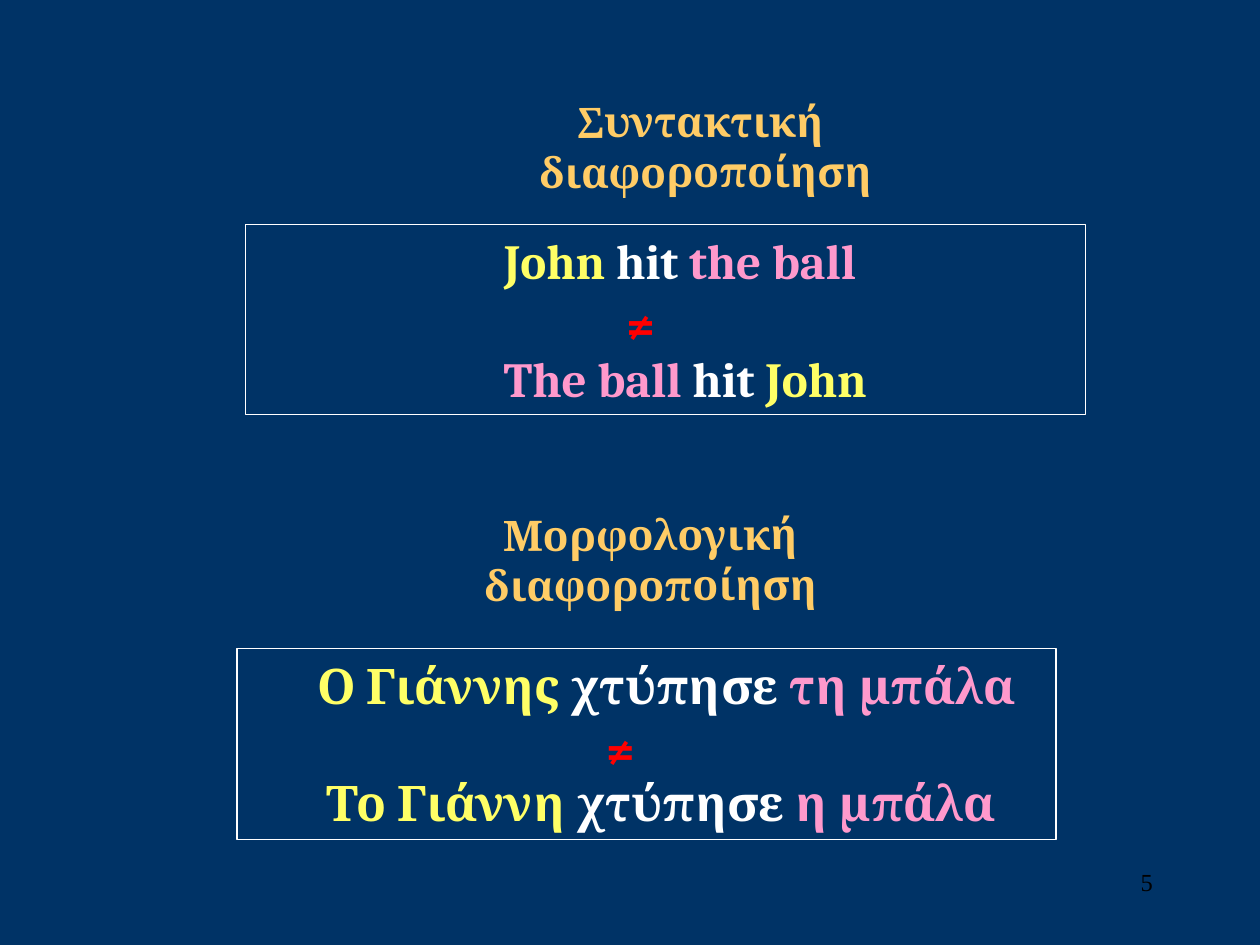
"""Build a slide contrasting syntactic and morphological differentiation."""
from pptx import Presentation
from pptx.dml.color import RGBColor
from pptx.enum.shapes import MSO_SHAPE
from pptx.enum.text import MSO_ANCHOR, PP_ALIGN
from pptx.util import Cm, Pt

NAVY = RGBColor(0x00, 0x33, 0x66)
GOLD = RGBColor(0xFF, 0xCC, 0x66)
YELLOW = RGBColor(0xFF, 0xFF, 0x66)
PINK = RGBColor(0xFF, 0x99, 0xCC)
WHITE = RGBColor(0xFF, 0xFF, 0xFF)
RED = RGBColor(0xFF, 0x00, 0x00)
BLACK = RGBColor(0x00, 0x00, 0x00)

PAIRS = [
    {
        "head": ["Συντακτική ", "διαφοροποίηση"],
        "head_at": (8.76, 1.8, 10.13, 2.31),
        "lines": [
            [("John", YELLOW), (" hit ", WHITE), ("the ball ", PINK)],
            [("The ball", PINK), (" hit ", WHITE), ("John", YELLOW)],
        ],
        "box_at": (4.95, 4.52, 16.94, 3.84),
        "sign_at": (12.37, 5.79, 1.04, 1.45),
    },
    {
        "head": ["Μορφολογική", "διαφοροποίηση"],
        "head_at": (8.59, 10.13, 8.26, 2.31),
        "lines": [
            [("Ο Γιάννης ", YELLOW), ("χτύπησε ", WHITE), ("τη μπάλα", PINK)],
            [("Το Γιάννη ", YELLOW), ("χτύπησε ", WHITE), ("η μπάλα ", PINK)],
        ],
        "box_at": (4.78, 13.08, 16.51, 3.84),
        "sign_at": (11.96, 14.35, 1.04, 1.45),
    },
]


def write(shape, lines, size=28, font="Cambria", bold=True, align=PP_ALIGN.CENTER,
          indent=0.79, gap=0, wrap=True):
    """Fill a shape with lines, each a list of (text, colour) runs."""
    frame = shape.text_frame
    frame.word_wrap = wrap
    frame.vertical_anchor = MSO_ANCHOR.TOP
    for i, runs in enumerate(lines):
        para = frame.add_paragraph() if i else frame.paragraphs[0]
        para.alignment = align
        para.space_before = Pt(gap if i else 0)
        if indent:
            para._p.get_or_add_pPr().set("marL", str(Cm(indent)))
        for text, color in runs:
            run = para.add_run()
            run.text = text
            run.font.size = Pt(size)
            run.font.name = font
            run.font.bold = bold
            run.font.color.rgb = color


def place(at):
    return [Cm(n) for n in at]


def draw(slide, pair):
    group = slide.shapes.add_group_shape().shapes
    box = group.add_shape(MSO_SHAPE.RECTANGLE, *place(pair["box_at"]))
    box.shadow.inherit = False
    box.fill.background()
    box.line.color.rgb = WHITE
    box.line.width = Pt(0.75)
    write(box, pair["lines"], gap=33.8)

    head = group.add_textbox(*place(pair["head_at"]))
    head.rotation = 359.7
    write(head, [[(text, GOLD)] for text in pair["head"]], size=24)

    sign = group.add_textbox(*place(pair["sign_at"]))
    write(sign, [[("≠", RED)]], align=PP_ALIGN.LEFT, indent=0, wrap=False)


def main():
    deck = Presentation()
    deck.slide_width, deck.slide_height = Cm(25.4), Cm(19.05)
    slide = deck.slides.add_slide(deck.slide_layouts[6])
    slide.background.fill.solid()
    slide.background.fill.fore_color.rgb = NAVY
    page = slide.shapes.add_textbox(*place((18.21, 17.35, 5.28, 1.27)))
    write(page, [[("5", BLACK)]], size=14, font="Times New Roman", bold=False,
          align=PP_ALIGN.RIGHT, indent=0)
    for pair in PAIRS:
        draw(slide, pair)
    deck.save("out.pptx")


if __name__ == "__main__":
    main()
